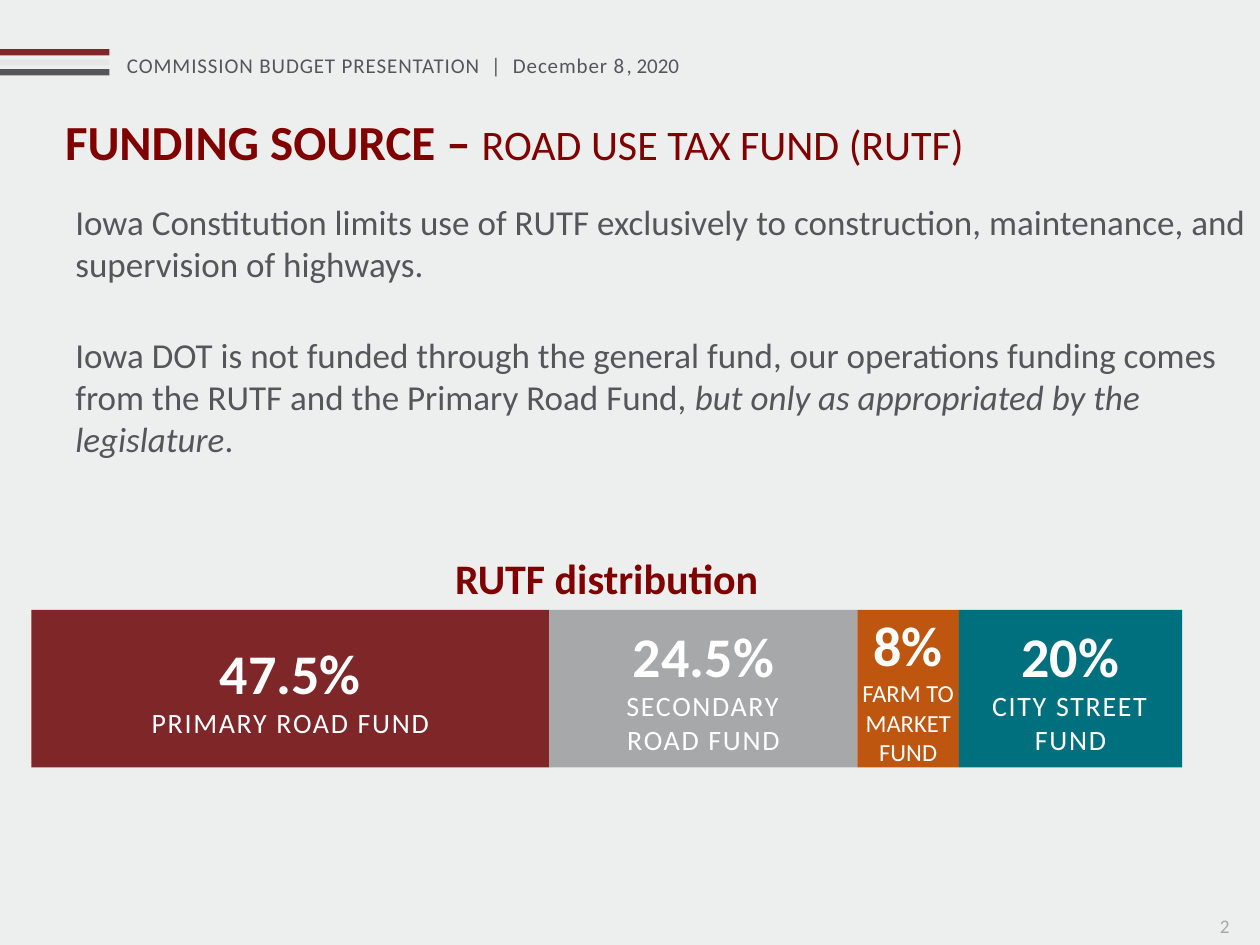
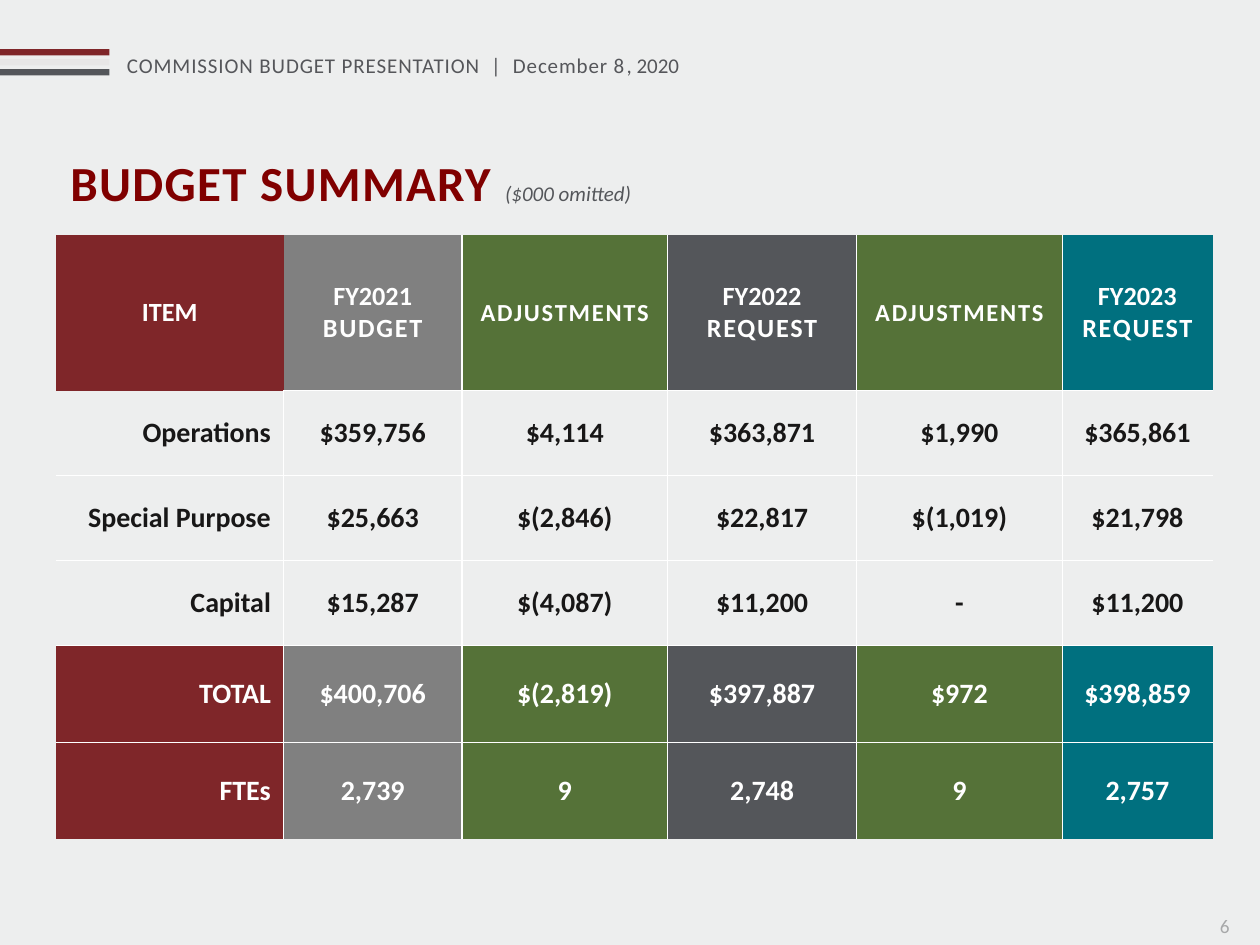
"""Build two commission budget slides: funding source and budget summary."""
from dataclasses import dataclass
from itertools import accumulate

from lxml import etree
from pptx import Presentation
from pptx.dml.color import RGBColor
from pptx.enum import shapes, text
from pptx.oxml import ns
from pptx.util import Pt

FONT = "Calibri"
PAPER = RGBColor(0xED, 0xEE, 0xEE)
WHITE = RGBColor(0xFF, 0xFF, 0xFF)
INK = RGBColor(0x18, 0x17, 0x17)
TEXT_GREY = RGBColor(0x55, 0x56, 0x5A)
SLATE = RGBColor(0x54, 0x56, 0x5A)
MIST = RGBColor(0xE7, 0xE6, 0xE6)
SILVER = RGBColor(0xA7, 0xA8, 0xA9)
GREY = RGBColor(0x80, 0x80, 0x80)
MAROON = RGBColor(0x80, 0x00, 0x00)
BRICK = RGBColor(0x7F, 0x26, 0x29)
ORANGE = RGBColor(0xBE, 0x56, 0x0F)
TEAL = RGBColor(0x00, 0x70, 0x7F)
GREEN = RGBColor(0x55, 0x72, 0x38)

CENTER = text.PP_ALIGN.CENTER
LEFT = text.PP_ALIGN.LEFT
RIGHT = text.PP_ALIGN.RIGHT
PLAIN_TABLE = "{2D5ABB26-0587-4C30-8999-92F81FD0307C}"


@dataclass(frozen=True)
class Area:
    """A rectangle on the slide, in points."""
    left: float
    top: float
    width: float
    height: float

    def lengths(self) -> list:
        """Return the four values as slide lengths."""
        return [Pt(value) for value in (self.left, self.top, self.width, self.height)]


@dataclass(frozen=True)
class Span:
    """A piece of text in one format."""
    words: str
    size: float
    color: RGBColor
    bold: bool = False
    italic: bool = False
    spacing: float = 0


@dataclass(frozen=True)
class Share:
    """One segment of the distribution bar."""
    percent: str
    fund: str
    width: float
    color: RGBColor
    size: float = 16
    spacing: float = 1
    margin: float = 7.2


@dataclass(frozen=True)
class Column:
    """One column of the budget table."""
    heading: tuple[Span, ...]
    width: float
    color: RGBColor


@dataclass(frozen=True)
class BudgetRow:
    """One line of the budget table."""
    values: tuple[str, ...]
    height: float
    filled: bool = False


def heading(*lines: tuple[str, float, float]) -> tuple[Span, ...]:
    """Return bold white heading lines from words, size and spacing."""
    return tuple(Span(words, size, WHITE, True, spacing=spacing)
                 for words, size, spacing in lines)


ADJUSTMENTS = heading(("ADJUSTMENTS", 14, 1))

SHARES = (
    Share("47.5%", "PRIMARY ROAD FUND", 296, BRICK),
    Share("24.5%", "SECONDARY\nROAD FUND", 176, SILVER),
    Share("8%", "FARM TO MARKET FUND", 58, ORANGE, 14, 0, 2),
    Share("20%", "CITY STREET FUND", 127.5, TEAL),
)
COLUMNS = (
    Column(heading(("ITEM", 15, 0)), 130, BRICK),
    Column(heading(("FY2021", 15, 0), ("BUDGET", 15, 1)), 102, GREY),
    Column(ADJUSTMENTS, 117.5, GREEN),
    Column(heading(("FY2022", 15, 0), ("REQUEST", 15, 1)), 108, SLATE),
    Column(ADJUSTMENTS, 117.5, GREEN),
    Column(heading(("FY2023", 15, 0), ("REQUEST", 15, 1)), 86, TEAL),
)
HEADING_HEIGHT = 89
ROWS = (
    BudgetRow(("Operations", "$359,756", "$4,114", "$363,871", "$1,990", "$365,861"), 48.5),
    BudgetRow(("Special Purpose", "$25,663", "$(2,846)", "$22,817", "$(1,019)", "$21,798"), 48.5),
    BudgetRow(("Capital", "$15,287", "$(4,087)", "$11,200", "-", "$11,200"), 48.5),
    BudgetRow(("TOTAL", "$400,706", "$(2,819)", "$397,887", "$972", "$398,859"), 55.5, True),
    BudgetRow(("FTEs", "2,739", "9", "2,748", "9", "2,757"), 55.5, True),
)


def add_span(para, span: Span) -> None:
    """Append a span to a paragraph, turning newlines into line breaks."""
    for index, words in enumerate(span.words.split("\n")):
        if index:
            para.add_line_break()
        run = para.add_run()
        run.text = words
        font = run.font
        font.name, font.size = FONT, Pt(span.size)
        font.bold, font.italic = span.bold, span.italic
        font.color.rgb = span.color
        if span.spacing:
            run._r.get_or_add_rPr().set("spc", str(round(span.spacing * 100)))


def write(frame, paragraphs, align=LEFT, gap: float = 0) -> None:
    """Fill a text frame with paragraphs, each a sequence of spans."""
    for index, spans in enumerate(paragraphs):
        para = frame.add_paragraph() if index else frame.paragraphs[0]
        para.alignment = align
        if index and gap:
            para.space_before = Pt(gap)
        for span in spans:
            add_span(para, span)


def add_text(page, area: Area, paragraphs, align=LEFT, gap: float = 0) -> None:
    """Add a wrapping text box."""
    frame = page.shapes.add_textbox(*area.lengths()).text_frame
    frame.word_wrap = True
    write(frame, paragraphs, align, gap)


def add_block(page, area: Area, color: RGBColor):
    """Add a flat rectangle without outline."""
    block = page.shapes.add_shape(shapes.MSO_SHAPE.RECTANGLE, *area.lengths())
    block.shadow.inherit = False
    block.fill.solid()
    block.fill.fore_color.rgb = color
    block.line.fill.background()
    return block


def add_page(deck, number: str, title_area: Area, title: tuple[Span, ...]):
    """Add a slide with header stripes, header text, title and page number."""
    page = deck.slides.add_slide(deck.slide_layouts[5])
    for index, color in enumerate((BRICK, MIST, SLATE)):
        add_block(page, Area(0, 28 + 5.75 * index, 62.5, 3.6), color)
    add_text(page, Area(65.5, 26.5, 348.5, 36), [(
        Span("COMMISSION BUDGET PRESENTATION  |  December 8", 12, TEXT_GREY, spacing=0.5),
        Span(", 2020", 12, TEXT_GREY))])
    box = page.shapes.title
    box.left, box.top, box.width, box.height = title_area.lengths()
    frame = box.text_frame
    frame.word_wrap = True
    frame.auto_size = text.MSO_AUTO_SIZE.NONE
    frame.vertical_anchor = text.MSO_ANCHOR.TOP
    write(frame, [title])
    add_text(page, Area(690, 519, 30, 21), [(Span(number, 11, SILVER),)])
    return page


def add_distribution(page) -> None:
    """Draw the distribution bar with its heading."""
    left, top, height = 18, 348.5, 90
    widths = [share.width for share in SHARES]
    add_text(page, Area(left, 312, sum(widths), 36),
             [(Span("RUTF distribution", 24, MAROON, True),)], CENTER)
    for share, start in zip(SHARES, accumulate(widths, initial=left)):
        block = add_block(page, Area(start, top, share.width, height), share.color)
        frame = block.text_frame
        frame.word_wrap = True
        frame.vertical_anchor = text.MSO_ANCHOR.MIDDLE
        frame.margin_left = frame.margin_right = Pt(share.margin)
        write(frame, [(Span(share.percent, 32, WHITE, True),),
                      (Span(share.fund, share.size, WHITE, spacing=share.spacing),)], CENTER)


def add_border(cell, side: str) -> None:
    """Add a thin white border to one side of a cell."""
    line = etree.SubElement(cell._tc.get_or_add_tcPr(), ns.qn(f"a:{side}"), w=str(Pt(0.75)))
    fill = etree.SubElement(line, ns.qn("a:solidFill"))
    etree.SubElement(fill, ns.qn("a:srgbClr"), val=str(WHITE))


def format_cell(cell, color: RGBColor | None, sides: list[str]) -> None:
    """Set the borders, fill and anchor of a cell."""
    for side in sides:
        add_border(cell, side)
    if color is None:
        cell.fill.background()
    else:
        cell.fill.solid()
        cell.fill.fore_color.rgb = color
    cell.vertical_anchor = text.MSO_ANCHOR.MIDDLE


def add_budget_table(page) -> None:
    """Draw the budget table."""
    heights = [HEADING_HEIGHT] + [row.height for row in ROWS]
    area = Area(32, 134.25, sum(column.width for column in COLUMNS), sum(heights))
    holder = page.shapes.add_table(len(heights), len(COLUMNS), *area.lengths())
    holder._element.xpath(".//a:tableStyleId")[0].text = PLAIN_TABLE
    table = holder.table
    table.horz_banding = False
    for line, height in zip(table.rows, heights):
        line.height = Pt(height)
    for index, column in enumerate(COLUMNS):
        table.columns[index].width = Pt(column.width)
        right = ["lnR"] if index < len(COLUMNS) - 1 else []
        cell = table.cell(0, index)
        format_cell(cell, column.color, right + ["lnB"] if index else [])
        cell.margin_left = cell.margin_right = Pt(3.6)
        write(cell.text_frame, [(span,) for span in column.heading], CENTER)
        for number, row in enumerate(ROWS, 1):
            cell = table.cell(number, index)
            bottom = ["lnB"] if number < len(ROWS) else []
            format_cell(cell, column.color if row.filled else None, right + bottom)
            span = Span(row.values[index], 16, WHITE if row.filled else INK, True)
            write(cell.text_frame, [(span,)], CENTER if index else RIGHT)


def build_funding_source(deck) -> None:
    """Build the funding source slide."""
    page = add_page(deck, "2", Area(30, 60, 690, 90), (
        Span("FUNDING SOURCE – ", 28, MAROON, True),
        Span("ROAD USE TAX FUND (RUTF)", 24, MAROON)))
    add_text(page, Area(36, 111, 684, 196), [
        (Span("Iowa Constitution limits use of RUTF exclusively to construction, "
              "maintenance, and supervision of highways.", 20, TEXT_GREY),),
        (Span("Iowa DOT is not funded through the general fund, our operations funding "
              "comes from the RUTF and the Primary Road Fund, ", 20, TEXT_GREY),
         Span("but only as appropriated by the legislature", 20, TEXT_GREY, italic=True),
         Span(".", 20, TEXT_GREY)),
    ], gap=28)
    add_distribution(page)


def build_budget_summary(deck) -> None:
    """Build the budget summary slide."""
    page = add_page(deck, "6", Area(33, 83.5, 654, 50), (
        Span("BUDGET SUMMARY ", 28, MAROON, True, spacing=0.8),
        Span("($000 omitted)", 12, SLATE, italic=True)))
    add_budget_table(page)


def main() -> None:
    """Build and save the deck."""
    deck = Presentation()
    deck.slide_width, deck.slide_height = Pt(720), Pt(540)
    backdrop = deck.slide_master.background.fill
    backdrop.solid()
    backdrop.fore_color.rgb = PAPER
    build_funding_source(deck)
    build_budget_summary(deck)
    deck.save("out.pptx")


if __name__ == "__main__":
    main()
